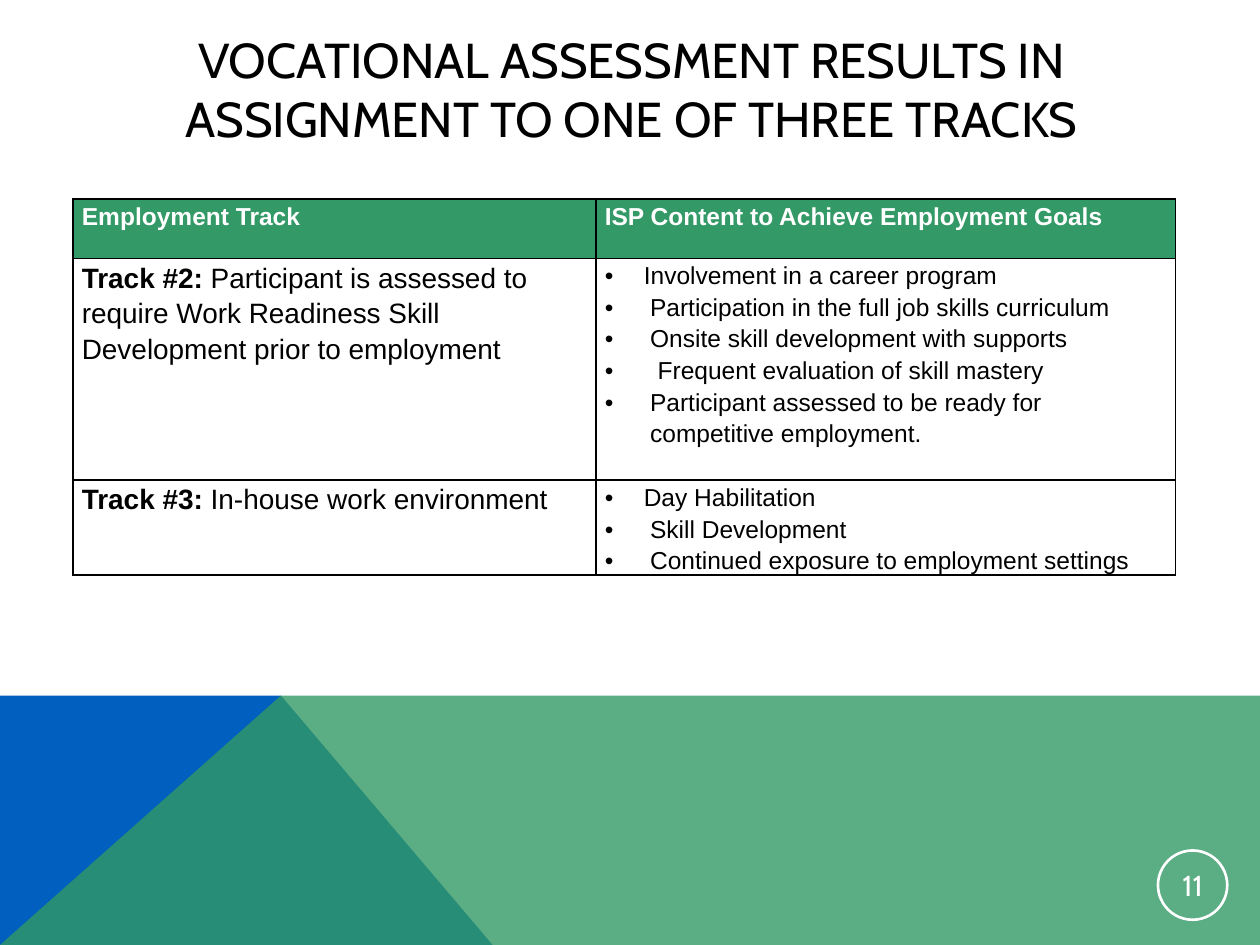
"""Build the employment track slide with its table and coloured footer."""
from lxml import etree
from pptx import Presentation
from pptx.dml.color import RGBColor
from pptx.enum.shapes import MSO_SHAPE
from pptx.enum.text import MSO_ANCHOR, PP_ALIGN
from pptx.oxml.ns import qn
from pptx.util import Inches, Pt

OVAL = MSO_SHAPE.OVAL
MIDDLE = MSO_ANCHOR.MIDDLE
CENTER = PP_ALIGN.CENTER
BLACK = RGBColor(0, 0, 0)
WHITE = RGBColor(255, 255, 255)
BLUE = RGBColor(0, 0x5F, 0xBF)
GREEN = RGBColor(0x33, 0x99, 0x66)

TITLE = "VOCATIONAL ASSESSMENT RESULTS IN ASSIGNMENT TO ONE OF THREE TRACKS"
NUMBER = "11"
HEADS = ["Employment Track", "ISP Content to Achieve Employment Goals"]
TRACKS = [
    ("Track #2:", " Participant is assessed to require Work Readiness Skill "
     "Development prior to employment", [
         ("Involvement in a career program", 0.31),
         ("Participation in the full job skills curriculum", 0.36),
         ("Onsite skill development with supports", 0.36),
         ("Frequent evaluation of skill mastery", 0.42),
         ("Participant assessed to be ready for competitive employment.", 0.36),
     ]),
    ("Track #3:", " In-house work environment", [
        ("Day Habilitation", 0.31),
        ("Skill Development", 0.36),
        ("Continued exposure to employment settings", 0.36),
    ]),
]
WIDTHS = [4.15, 4.6]
HEIGHTS = [0.47, 1.76, 0.75]
BANDS = [
    (BLUE, 100, [(0, 7.5), (0, 5.52), (2.23, 5.52), (3.91, 7.5)]),
    (GREEN, 80, [(0, 7.5), (2.23, 5.52), (10, 5.52), (10, 7.5)]),
]
HEAD = {"name": "Arial", "size": Pt(14), "bold": True}
BODY = {"name": "Arial", "size": Pt(14), "bold": False}
LABEL = {"name": "Arial", "size": Pt(16), "bold": True}
TRACK = {"name": "Arial", "size": Pt(16), "bold": False}
TOP = {"name": "Cabin", "size": Pt(28)}
BADGE = {"name": "Cabin", "size": Pt(16.5)}


def add_run(para, text, style, color=BLACK):
    run = para.add_run()
    run.text = text
    for key, value in style.items():
        setattr(run.font, key, value)
    run.font.color.rgb = color


def add_band(slide, color, alpha, points):
    spots = [(Inches(x), Inches(y)) for x, y in points]
    build = slide.shapes.build_freeform(*spots[0])
    build.add_line_segments(spots[1:], close=True)
    band = build.convert_to_shape()
    band.shadow.inherit = False
    band.fill.solid()
    band.fill.fore_color.rgb = color
    band.line.fill.background()
    if alpha < 100:
        tint = next(band.element.iter(qn("a:srgbClr")))
        etree.SubElement(tint, qn("a:alpha"), val=str(alpha * 1000))


def add_bullet(para, left):
    props = para._p.get_or_add_pPr()
    props.set("marL", str(Inches(left)))
    props.set("indent", str(-Inches(left)))
    etree.SubElement(props, qn("a:buFont"), typeface="Arial")
    etree.SubElement(props, qn("a:buChar"), char="•")


def style_cell(cell, color):
    for side, gap in zip(("left", "right", "top", "bottom"), (0.07, 0.07, 0, 0)):
        setattr(cell, "margin_" + side, Inches(gap))
    cell.fill.solid()
    cell.fill.fore_color.rgb = color
    props = cell._tc.get_or_add_tcPr()
    for spot, side in enumerate("LRTB"):
        line = etree.Element(qn("a:ln" + side), w=str(Pt(1)))
        fill = etree.SubElement(line, qn("a:solidFill"))
        etree.SubElement(fill, qn("a:srgbClr"), val=str(BLACK))
        props.insert(spot, line)
    for para in cell.text_frame.paragraphs:
        para.line_spacing = 1.15


def add_grid(slide):
    frame = slide.shapes.add_table(
        len(HEIGHTS), len(WIDTHS), Inches(0.58), Inches(1.58),
        Inches(sum(WIDTHS)), Inches(sum(HEIGHTS)))
    grid = frame.table
    for col, width in zip(grid.columns, WIDTHS):
        col.width = Inches(width)
    for row, height in zip(grid.rows, HEIGHTS):
        row.height = Inches(height)
    for col, text in enumerate(HEADS):
        add_run(grid.cell(0, col).text_frame.paragraphs[0], text, HEAD, WHITE)
    for row, (label, text, goals) in enumerate(TRACKS, 1):
        para = grid.cell(row, 0).text_frame.paragraphs[0]
        add_run(para, label, LABEL)
        add_run(para, text, TRACK)
        body = grid.cell(row, 1).text_frame
        for spot, (goal, left) in enumerate(goals):
            para = body.add_paragraph() if spot else body.paragraphs[0]
            add_bullet(para, left)
            add_run(para, goal, BODY)
    for row in range(len(HEIGHTS)):
        for col in range(len(WIDTHS)):
            style_cell(grid.cell(row, col), WHITE if row else GREEN)


def set_text(shape, text, style, color):
    frame = shape.text_frame
    frame.word_wrap = True
    frame.vertical_anchor = MIDDLE
    para = frame.paragraphs[0]
    para.alignment = CENTER
    add_run(para, text, style, color)


def add_badge(slide):
    badge = slide.shapes.add_shape(
        OVAL, Inches(9.19), Inches(6.75), Inches(0.55), Inches(0.55))
    badge.shadow.inherit = False
    badge.fill.background()
    badge.line.color.rgb = WHITE
    badge.line.width = Pt(1.5)
    for side in ("left", "right", "top", "bottom"):
        setattr(badge.text_frame, "margin_" + side, Inches(0.01))
    set_text(badge, NUMBER, BADGE, WHITE)


def main():
    deck = Presentation()
    deck.slide_width = Inches(10)
    deck.slide_height = Inches(7.5)
    slide = deck.slides.add_slide(deck.slide_layouts[6])
    for band in BANDS:
        add_band(slide, *band)
    add_grid(slide)
    add_badge(slide)
    title = slide.shapes.add_textbox(
        Inches(0.9), Inches(0.4), Inches(8.22), Inches(0.6))
    set_text(title, TITLE, TOP, BLACK)
    deck.save("out.pptx")


if __name__ == "__main__":
    main()
